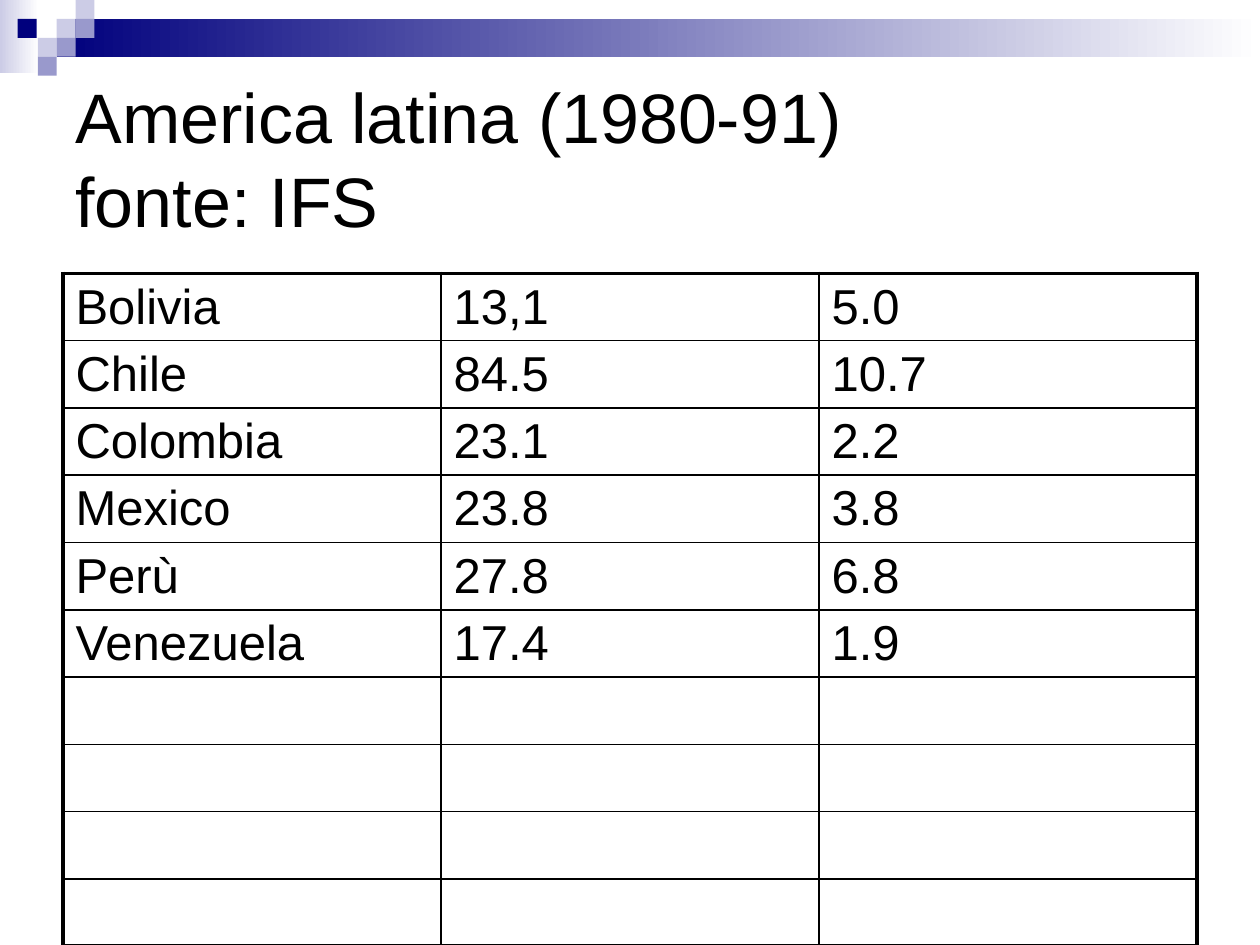
from lxml import etree
from pptx import Presentation
from pptx.dml.color import RGBColor
from pptx.enum.shapes import MSO_SHAPE
from pptx.enum.text import MSO_ANCHOR, PP_ALIGN
from pptx.oxml.ns import qn
from pptx.util import Inches, Pt

RECTANGLE = MSO_SHAPE.RECTANGLE
LEFT = PP_ALIGN.LEFT
MIDDLE = MSO_ANCHOR.MIDDLE
TITLE_ONLY = 5

FONT = "Arial"
BLACK, WHITE = "000000", "FFFFFF"
NAVY, LAVENDER, PERIWINKLE = "00007D", "CCCCE6", "9999CC"
THIN, THICK = 1, 2.25
TILE = 0.15
TILES = [
    (0.45, 0.15, LAVENDER),
    (0.6, 0, LAVENDER),
    (0.6, 0.15, PERIWINKLE),
    (0.3, 0.3, LAVENDER),
    (0.14, 0.15, NAVY),
    (0.45, 0.3, PERIWINKLE),
    (0.3, 0.45, PERIWINKLE),
]
TITLE_LINES = ["America latina (1980-91)", "fonte: IFS"]
COUNTRIES = [
    ("Bolivia", "13,1", "5.0"),
    ("Chile", "84.5", "10.7"),
    ("Colombia", "23.1", "2.2"),
    ("Mexico", "23.8", "3.8"),
    ("Perù", "27.8", "6.8"),
    ("Venezuela", "17.4", "1.9"),
]
EMPTY_ROWS = 4


def color(hex_code):
    """Return the RGB colour for a hex string."""
    return RGBColor.from_string(hex_code)


def add_text(paragraph, text, size):
    """Append one formatted run to a paragraph."""
    run = paragraph.add_run()
    run.text = text
    run.font.name = FONT
    run.font.size = Pt(size)
    run.font.color.rgb = color(BLACK)


def add_block(slide, left, top, width, height, start, end=None):
    """Add a borderless rectangle, solid or fading from start to end."""
    block = slide.shapes.add_shape(
        RECTANGLE, Inches(left), Inches(top), Inches(width), Inches(height))
    block.shadow.inherit = False
    block.line.fill.background()
    if end is None:
        block.fill.solid()
        block.fill.fore_color.rgb = color(start)
        return
    block.fill.gradient()
    block.fill.gradient_angle = 0
    for stop, shade in zip(block.fill.gradient_stops, (start, end)):
        stop.color.rgb = color(shade)


def add_header(slide, left, top, width):
    """Place the fading bands and the mosaic of tiles along the top."""
    add_block(slide, left, top, 0.31, 0.58, LAVENDER, WHITE)
    add_block(slide, left + 0.45, top + TILE, width - 0.45, 0.3, NAVY, WHITE)
    for tile_left, tile_top, shade in TILES:
        add_block(slide, left + tile_left, top + tile_top, TILE, TILE, shade)


def fill_title(slide, left, top, width, height):
    """Move the title placeholder and write its lines."""
    title = slide.shapes.title
    title.left, title.top = Inches(left), Inches(top)
    title.width, title.height = Inches(width), Inches(height)
    title.text_frame.vertical_anchor = MIDDLE
    title.text_frame.word_wrap = True
    paragraph = title.text_frame.paragraphs[0]
    paragraph.alignment = LEFT
    for index, line in enumerate(TITLE_LINES):
        if index:
            paragraph.add_line_break()
        add_text(paragraph, line, 40)


def set_borders(cell, widths):
    """Draw the left, right, top and bottom borders of a cell."""
    properties = cell._tc.get_or_add_tcPr()
    for index, (side, width) in enumerate(zip("LRTB", widths)):
        border = etree.Element(qn(f"a:ln{side}"), w=str(Pt(width)))
        fill = etree.SubElement(border, qn("a:solidFill"))
        etree.SubElement(fill, qn("a:srgbClr"), val=BLACK)
        properties.insert(index, border)


def add_country_table(slide, left, top, width, height):
    """Add the country table with thick outer and thin inner borders."""
    columns = len(COUNTRIES[0])
    records = COUNTRIES + [("",) * columns] * EMPTY_ROWS
    table = slide.shapes.add_table(
        len(records), columns, Inches(left), Inches(top),
        Inches(width), Inches(height)).table
    table.first_row = False
    table.horz_banding = False
    for row, record in enumerate(records):
        for column, value in enumerate(record):
            cell = table.cell(row, column)
            cell.fill.background()
            outer = (column == 0, column == columns - 1,
                     row == 0, row == len(records) - 1)
            set_borders(cell, [THICK if edge else THIN for edge in outer])
            if value:
                add_text(cell.text_frame.paragraphs[0], value, 28)


def main():
    """Build and save the slide."""
    presentation = Presentation()
    presentation.slide_width = Inches(10)
    presentation.slide_height = Inches(7.5)
    slide = presentation.slides.add_slide(
        presentation.slide_layouts[TITLE_ONLY])
    add_header(slide, 0, 0, 10)
    fill_title(slide, 0.5, 0.5, 9, 1.5)
    add_country_table(slide, 0.5, 2.17, 9, 5.34)
    presentation.save("out.pptx")


if __name__ == "__main__":
    main()
